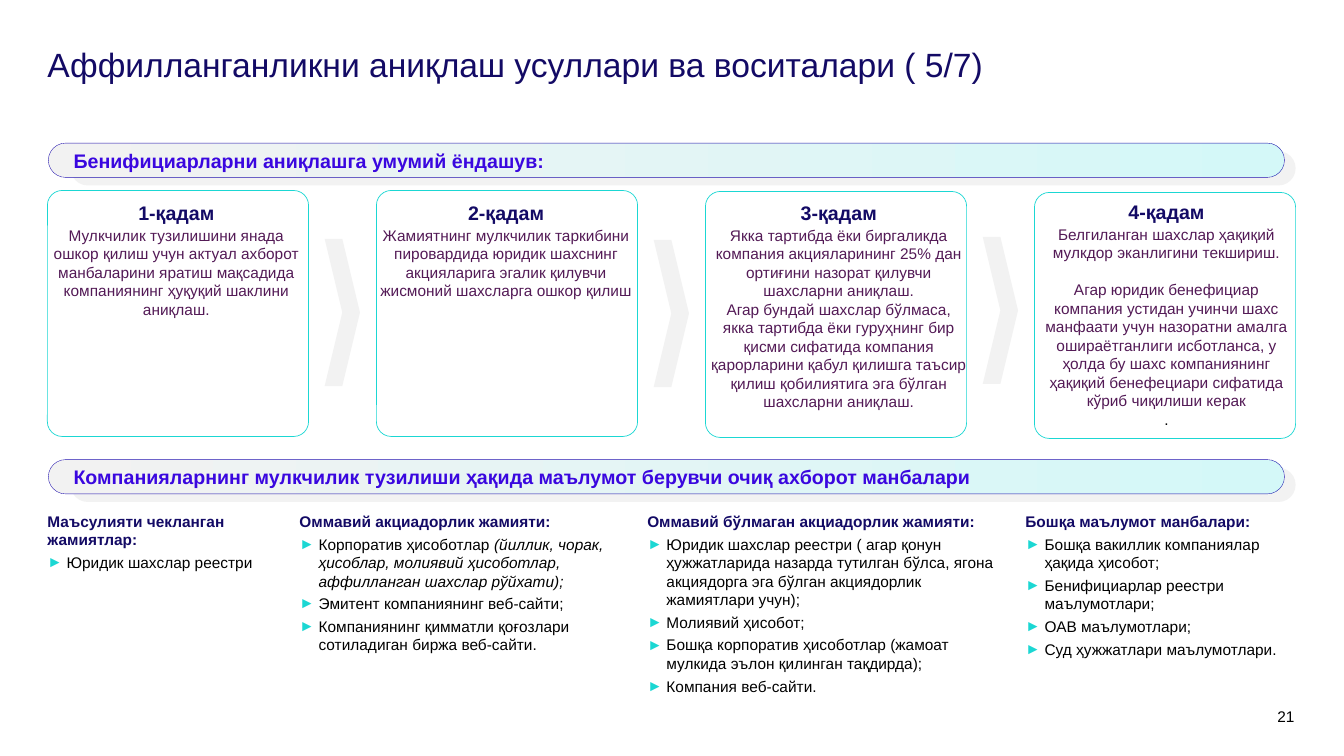
from dataclasses import dataclass

import pptx
import pptx.dml.color
import pptx.enum.shapes
import pptx.enum.text
import pptx.oxml
import pptx.oxml.ns
import pptx.util

Inches, Pt = pptx.util.Inches, pptx.util.Pt
Kind = pptx.enum.shapes.MSO_SHAPE
Align = pptx.enum.text.PP_ALIGN
Anchor = pptx.enum.text.MSO_ANCHOR


@dataclass(frozen=True)
class Theme:
    font: str = "Arial"
    navy: str = "130A65"
    plum: str = "531A56"
    violet: str = "3A07DF"
    edge: str = "2112AE"
    teal: str = "1BD7D3"
    pale: str = "D4F8F8"
    grey: str = "F2F2F2"
    black: str = "000000"
    title: float = 24
    head: float = 14
    body: float = 11


@dataclass(frozen=True)
class Para:
    text: str
    slant: str = ""  # italic ending
    size: float = 11
    color: str = "000000"
    bold: bool = False
    align: Align = Align.LEFT
    before: float = 0
    after: float = 0
    bullet: bool = False


@dataclass(frozen=True)
class Step:
    top: float
    left: float
    head: float
    paras: tuple[Para, ...]


@dataclass(frozen=True)
class Source:
    left: float
    width: float
    head: str
    items: tuple[Para, ...]


LOOK = Theme()


def rgb(code: str) -> pptx.dml.color.RGBColor:
    return pptx.dml.color.RGBColor.from_string(code)


def mark(para) -> None:
    """Give a paragraph a teal arrow bullet with a hanging indent."""
    props = para._p.get_or_add_pPr()
    props.set("marL", str(Inches(0.19)))
    props.set("indent", str(-Inches(0.19)))
    space = pptx.oxml.ns.nsdecls("a")
    for xml in (f'<a:buClr {space}><a:srgbClr val="{LOOK.teal}"/></a:buClr>',
                f'<a:buFont {space} typeface="{LOOK.font}"/>',
                f'<a:buChar {space} char="►"/>'):
        props.append(pptx.oxml.parse_xml(xml))


def write(frame, *paras: Para, pad=(0, 0, 0, 0), anchor=Anchor.TOP, lead=None) -> None:
    frame.word_wrap = True
    frame.auto_size = pptx.enum.text.MSO_AUTO_SIZE.NONE
    frame.vertical_anchor = anchor
    frame.margin_left, frame.margin_top, frame.margin_right, frame.margin_bottom = map(Inches, pad)
    for i, item in enumerate(paras):
        para = frame.add_paragraph() if i else frame.paragraphs[0]
        if item.bullet:
            mark(para)
        para.alignment = item.align
        para.space_before, para.space_after = Pt(item.before), Pt(item.after)
        if lead:
            para.line_spacing = lead
        for words, slant in ((item.text, False), (item.slant, True)):
            if words:
                run = para.add_run()
                run.text = words
                font = run.font
                font.name, font.size = LOOK.font, Pt(item.size)
                font.bold, font.italic = item.bold, slant
                font.color.rgb = rgb(item.color)


def label(slide, box: tuple, *paras: Para) -> None:
    write(slide.shapes.add_textbox(*map(Inches, box)).text_frame, *paras)


def shape(slide, kind, box: tuple, fill="", line="", weight=0.5, bend=None):
    item = slide.shapes.add_shape(kind, *map(Inches, box))
    item.shadow.inherit = False
    if bend is not None:
        item.adjustments[0] = bend
    if fill:
        item.fill.solid()
        item.fill.fore_color.rgb = rgb(fill)
    else:
        item.fill.background()
    if line:
        item.line.color.rgb = rgb(line)
        item.line.width = Pt(weight)
    else:
        item.line.fill.background()
    return item


def banner(slide, top: float, text: str) -> None:
    shape(slide, Kind.ROUNDED_RECTANGLE, (0.7, top + 0.08, 12.15, 0.34), LOOK.grey, bend=0.5)
    bar = shape(slide, Kind.ROUNDED_RECTANGLE, (0.48, top, 12.26, 0.34),
                line=LOOK.edge, weight=0.25, bend=0.5)
    bar.fill.gradient()
    bar.fill.gradient_angle = 0
    for stop, code in zip(bar.fill.gradient_stops, (LOOK.grey, LOOK.pale)):
        stop.color.rgb = rgb(code)
    write(bar.text_frame, Para(text, size=LOOK.head, color=LOOK.violet, bold=True),
          pad=(0.2, 0.05, 0.1, 0.05), anchor=Anchor.MIDDLE)


def note(text: str, **form) -> Para:
    return Para(text, **{"color": LOOK.plum, "align": Align.CENTER, **form})


def point(text: str, slant: str = "") -> Para:
    return Para(text, slant, size=LOOK.body, after=3, bullet=True)


STEPS = (
    Step(1.89, 0.48, 1.99, (note("Мукчилик тузилишини янада ошкор қилиш учун актуал ахборот манбаларини яратиш мақсадида компаниянинг ҳуқуқий шаклини аниқлаш.".replace("Мукчилик", "Мулкчилик")),)),
    Step(1.89, 3.75, 1.99, (note("Жамиятнинг мулкчилик таркибини пировардида юридик шахснинг акцияларига эгалик қилувчи жисмоний шахсларга ошкор қилиш"),)),
    Step(1.9, 7.05, 1.99, (
        note("Якка тартибда ёки биргаликда компания акцияларининг 25% дан ортиғини назорат қилувчи шахсларни аниқлаш."),
        note("Агар бундай шахслар бўлмаса, якка тартибда ёки гуруҳнинг бир қисми сифатида компания қарорларини қабул қилишга таъсир қилиш қобилиятига эга бўлган шахсларни аниқлаш."))),
    Step(1.91, 10.3, 1.98, (
        note("Белгиланган шахслар ҳақиқий мулкдор эканлигини текшириш."),
        note("Агар юридик бенефициар компания устидан учинчи шахс манфаати учун назоратни амалга ошираётганлиги исботланса, у ҳолда бу шахс компаниянинг ҳақиқий бенефециари сифатида кўриб чиқилиши керак", before=13.2),
        note(".", color=LOOK.black))),
)
ARROWS = (2.37, 2.38, 2.35)
SOURCES = (
    Source(0.47, 2.21, "Маъсулияти чекланган жамиятлар:", (point("Юридик шахслар реестри"),)),
    Source(2.97, 3.17, "Оммавий акциадорлик жамияти:", (
        point("Корпоратив ҳисоботлар ", "(йиллик, чорак, ҳисоблар, молиявий ҳисоботлар, аффилланган шахслар рўйхати);"),
        point("Эмитент компаниянинг веб-сайти;"),
        point("Компаниянинг қимматли қоғозлари сотиладиган биржа веб-сайти."))),
    Source(6.42, 3.46, "Оммавий бўлмаган акциадорлик жамияти:", (
        point("Юридик шахслар реестри ( агар қонун ҳужжатларида назарда тутилган бўлса, ягона акциядорга эга бўлган акциядорлик жамиятлари учун);"),
        point("Молиявий ҳисобот;"),
        point("Бошқа корпоратив ҳисоботлар (жамоат мулкида эълон қилинган тақдирда);"),
        point("Компания веб-сайти."))),
    Source(10.17, 2.68, "Бошқа маълумот манбалари:", (
        point("Бошқа вакиллик компаниялар ҳақида ҳисобот;"),
        point("Бенифициарлар реестри маълумотлари;"),
        point("ОАВ маълумотлари;"),
        point("Суд ҳужжатлари маълумотлари."))),
)


def main() -> None:
    deck = pptx.Presentation()
    deck.slide_width, deck.slide_height = Inches(13.33), Inches(7.5)
    slide = deck.slides.add_slide(deck.slide_layouts[5])

    # Title and page number
    title = slide.shapes.title
    title.left, title.top, title.width, title.height = map(Inches, (0.47, 0.48, 12.38, 0.48))
    write(title.text_frame, Para("Аффилланганликни аниқлаш усуллари ва воситалари ( 5/7)",
                                 size=LOOK.title, color=LOOK.navy), lead=0.9)
    label(slide, (12.41, 7.02, 0.43, 0.16), Para("21", align=Align.RIGHT))

    # Steps with chevrons between them
    first, pitch = 0.47, (10.26 - 0.47) / 3
    for i, top in enumerate(ARROWS):
        shape(slide, Kind.CHEVRON, (first + i * pitch + 2.75, top, 0.35, 1.46), LOOK.grey)
    for i, step in enumerate(STEPS):
        label(slide, (step.left, step.head, 2.54, 0.24),
              note(f"{i + 1}-қадам", size=LOOK.head, color=LOOK.navy, bold=True))
        label(slide, (step.left, step.head + 0.25, 2.54, 2.04), *step.paras)
        shape(slide, Kind.ROUNDED_RECTANGLE, (first + i * pitch, step.top, 2.59, 2.44),
              line=LOOK.teal, bend=0.06)

    # Open sources
    for part in SOURCES:
        label(slide, (part.left, 5.08, part.width, 1.83),
              Para(part.head, size=LOOK.body, color=LOOK.navy, bold=True, after=3), *part.items)

    # Section banners
    banner(slide, 1.42, "Бенифициарларни аниқлашга умумий ёндашув:")
    banner(slide, 4.56, "Компанияларнинг мулкчилик тузилиши ҳақида маълумот берувчи очиқ ахборот манбалари")

    deck.save("out.pptx")


if __name__ == "__main__":
    main()
